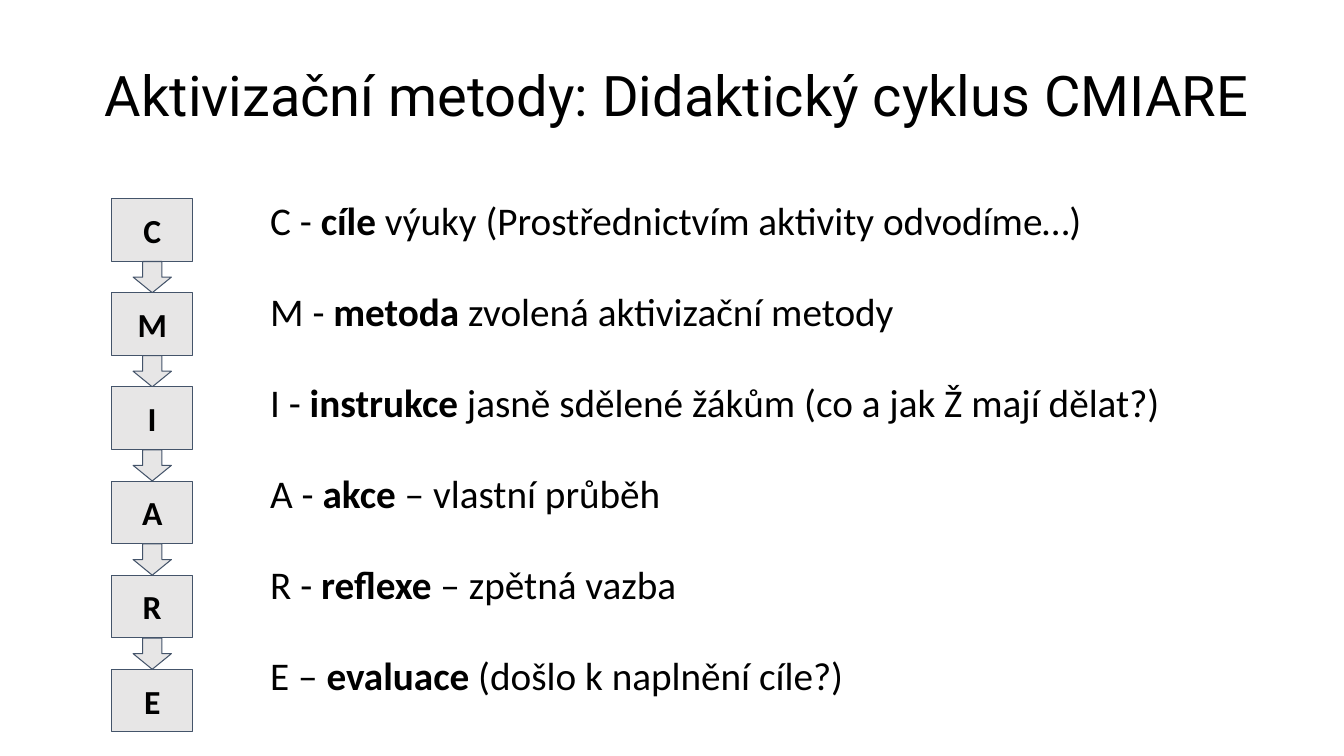
from dataclasses import dataclass

from lxml.etree import SubElement
from pptx import Presentation
from pptx.dml.color import RGBColor
from pptx.enum.shapes import MSO_SHAPE as Preset
from pptx.enum.text import MSO_ANCHOR as Anchor, MSO_AUTO_SIZE as AutoSize, PP_ALIGN as Align
from pptx.oxml.ns import qn
from pptx.util import Inches, Pt


@dataclass(frozen=True)
class Theme:
    text: RGBColor = RGBColor(0x00, 0x00, 0x00)
    fill: RGBColor = RGBColor(0xE7, 0xE6, 0xE6)
    outline: RGBColor = RGBColor(0x44, 0x54, 0x6A)
    outline_width: Pt = Pt(0.75)
    title_font: str = "Roboto"
    body_font: str = "Calibri"
    title_size: Pt = Pt(40)
    body_size: Pt = Pt(28)
    letter_size: Pt = Pt(24)
    step_gap: Pt = Pt(31.4)


THEME = Theme()

TITLE = "Aktivizační metody: Didaktický cyklus CMIARE"

# Letter, separator, key word, explanation
STEPS = [
    ("C", " - ", "cíle", " výuky (Prostřednictvím aktivity odvodíme…)"),
    ("M", " - ", "metoda", " zvolená aktivizační metody"),
    ("I", " - ", "instrukce", " jasně sdělené žákům (co a jak Ž mají dělat?)"),
    ("A", " - ", "akce", " – vlastní průběh"),
    ("R", " - ", "reflexe", " – zpětná vazba"),
    ("E", " – ", "evaluace", " (došlo k naplnění cíle?)"),
]

# Chain of boxes and arrows, in inches
CHAIN_CENTER, CHAIN_TOP = 1.51, 1.97
BOX_WIDTH, BOX_HEIGHT = 0.8, 0.62
ARROW_WIDTH, ARROW_HEIGHT = 0.38, 0.31
CHAIN_PITCH = 4.67 / 5


def set_attributes(target, values):
    for name, value in values.items():
        setattr(target, name, value)


def add_run(paragraph, text, font, size, bold=False):
    run = paragraph.add_run()
    run.text = text
    set_attributes(run.font, {"name": font, "size": size, "bold": bold})
    run.font.color.rgb = THEME.text


def place(shape, left, top, width, height):
    set_attributes(shape, {
        "left": Inches(left), "top": Inches(top),
        "width": Inches(width), "height": Inches(height),
    })


def fill_title(title):
    place(title, 0.81, 0.55, 11.8, 0.77)
    frame = title.text_frame
    set_attributes(frame, {
        "word_wrap": False, "auto_size": AutoSize.NONE, "vertical_anchor": Anchor.MIDDLE,
    })
    paragraph = frame.paragraphs[0]
    paragraph.alignment = Align.CENTER
    add_run(paragraph, TITLE, THEME.title_font, THEME.title_size)


def remove_bullet(paragraph):
    properties = paragraph._p.get_or_add_pPr()
    properties.set("marL", "0")
    properties.set("indent", "0")
    SubElement(properties, qn("a:buNone"))


def fill_steps(body):
    place(body, 2.58, 1.9, 9.43, 4.42)
    frame = body.text_frame
    set_attributes(frame, {
        "word_wrap": True, "auto_size": AutoSize.NONE, "vertical_anchor": Anchor.TOP,
    })
    for index, (letter, separator, keyword, explanation) in enumerate(STEPS):
        paragraph = frame.add_paragraph() if index else frame.paragraphs[0]
        set_attributes(paragraph, {
            "alignment": Align.LEFT, "line_spacing": 1.0,
            "space_before": Pt(0), "space_after": THEME.step_gap,
        })
        remove_bullet(paragraph)
        for text, bold in ((letter + separator, False), (keyword, True), (explanation, False)):
            add_run(paragraph, text, THEME.body_font, THEME.body_size, bold)


def add_chain_shape(slide, preset, top, width, height):
    shape = slide.shapes.add_shape(
        preset, Inches(CHAIN_CENTER - width / 2), Inches(top), Inches(width), Inches(height))
    shape.shadow.inherit = False
    shape.fill.solid()
    shape.fill.fore_color.rgb = THEME.fill
    shape.line.color.rgb = THEME.outline
    shape.line.width = THEME.outline_width
    return shape


def add_letter_box(slide, letter, top):
    frame = add_chain_shape(slide, Preset.RECTANGLE, top, BOX_WIDTH, BOX_HEIGHT).text_frame
    margins = ("margin_left", "margin_top", "margin_right", "margin_bottom")
    set_attributes(frame, dict.fromkeys(margins, Inches(0.1)))
    frame.vertical_anchor = Anchor.MIDDLE
    paragraph = frame.paragraphs[0]
    paragraph.alignment = Align.CENTER
    add_run(paragraph, letter, THEME.body_font, THEME.letter_size, bold=True)


def add_chain(slide):
    for index, (letter, *_) in enumerate(STEPS):
        top = CHAIN_TOP + index * CHAIN_PITCH
        if index:
            add_chain_shape(slide, Preset.DOWN_ARROW, top - ARROW_HEIGHT,
                            ARROW_WIDTH, ARROW_HEIGHT)
        add_letter_box(slide, letter, top)


def main():
    presentation = Presentation()
    presentation.slide_width = Inches(13.33)
    presentation.slide_height = Inches(7.5)
    slide = presentation.slides.add_slide(presentation.slide_layouts[1])

    # Title and list of steps
    fill_title(slide.shapes.title)
    fill_steps(slide.placeholders[1])

    # Letters of the cycle
    add_chain(slide)

    presentation.save("out.pptx")


if __name__ == "__main__":
    main()
